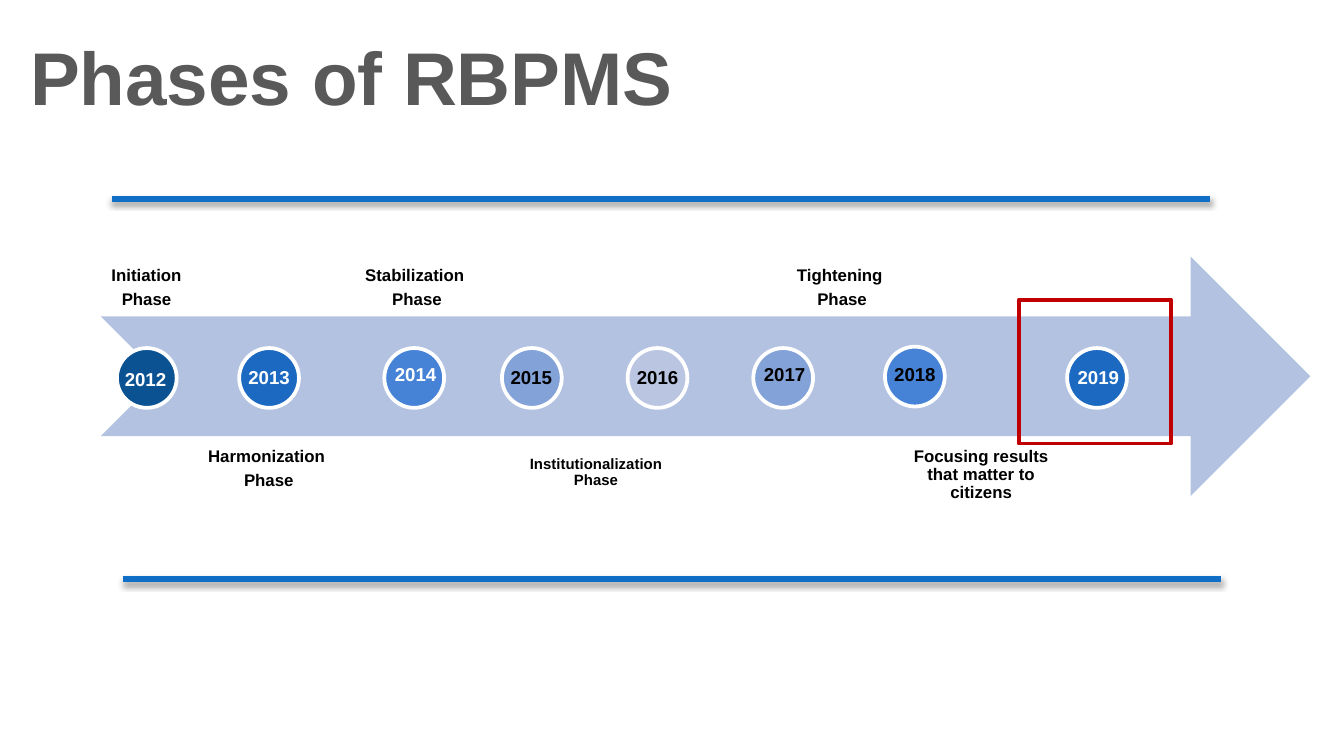
from lxml import etree
from pptx import Presentation
from pptx import util as u
from pptx.dml.color import RGBColor
from pptx.enum import shapes, text
from pptx.oxml import ns

PX = 4572
FONT = "Arial"
COLORS = {
    "title": "595959", "arrow": "B4C2E2", "rule": "0F6FC6", "focus": "C00000",
    "white": "FFFFFF", "black": "000000", "navy": "0B5292", "blue": "1C69C1",
    "mid": "4682D6", "soft": "83A2D8", "pale": "B9C5E1",
}
CIRCLE = 89
YEARS = [
    ("2012", 24, 136, "navy", "white", (16, 156, 110)),
    ("2013", 206, 136, "blue", "white", (200, 152, 132)),
    ("2014", 422, 136, "mid", "white", (418, 148, 134)),
    ("2015", 597, 136, "soft", "black", (590, 153, 116)),
    ("2016", 784, 136, "pale", "black", (778, 153, 150)),
    ("2017", 971, 136, "soft", "black", (967, 148, 116)),
    ("2018", 1167, 134, "mid", "black", (1161, 148, 134)),
    ("2019", 1438, 136, "blue", "white", (1434, 152, 120)),
]
TOP, BOTTOM = text.MSO_ANCHOR.TOP, text.MSO_ANCHOR.BOTTOM
PHASES = [
    (["Initiation ", "Phase"], 1, -264, 134, BOTTOM, 9),
    (["Harmonization ", "Phase"], 142, 270, 216, TOP, 9),
    (["Stabilization", " Phase"], 366, -264, 202, BOTTOM, 9),
    (["Institutionalization Phase"], 624, 2, 226, BOTTOM, 8),
    (["Tightening ", "Phase"], 978, -264, 250, BOTTOM, 9),
    (["Focusing results that matter to citizens"], 1173, 270, 274, TOP, 9),
]


def px(*lengths):
    """Turn px lengths into EMU."""
    return [u.Emu(length * PX) for length in lengths]


def color(name):
    """Look up a named colour."""
    return RGBColor.from_string(COLORS[name])


def add_text(slide, box, lines, size, fill="black", anchor=TOP, align=text.PP_ALIGN.LEFT,
             insets=(20, 10), spacing=None, after=None):
    """Add a bold text box with one paragraph per line."""
    frame = slide.shapes.add_textbox(*px(*box)).text_frame
    frame.word_wrap = True
    frame.vertical_anchor = anchor
    frame.margin_left = frame.margin_right = px(insets[0])[0]
    frame.margin_top = frame.margin_bottom = px(insets[1])[0]
    for index, line in enumerate(lines):
        paragraph = frame.paragraphs[0] if index == 0 else frame.add_paragraph()
        paragraph.alignment = align
        paragraph.line_spacing = spacing
        paragraph.space_after = after
        run = paragraph.add_run()
        run.text = line
        run.font.name, run.font.size, run.font.bold = FONT, u.Pt(size), True
        run.font.color.rgb = color(fill)


def add_shape(slide, kind, box, fill=None, line=None):
    """Add a flat preset shape with an optional fill and outline."""
    shape = slide.shapes.add_shape(kind, *px(*box))
    shape.shadow.inherit = False
    if fill:
        shape.fill.solid()
        shape.fill.fore_color.rgb = color(fill)
    else:
        shape.fill.background()
    if line:
        shape.line.color.rgb = color(line)
        shape.line.width = u.Pt(2)
    else:
        shape.line.fill.background()


def add_rule(slide, left, top, width):
    """Add a horizontal rule with a soft shadow below it."""
    rule = slide.shapes.add_connector(
        shapes.MSO_CONNECTOR.STRAIGHT, *px(left, top, left + width, top))
    rule.line.color.rgb = color("rule")
    rule.line.width = u.Pt(3)
    effects = etree.SubElement(rule._element.spPr, ns.qn("a:effectLst"))
    shadow = etree.SubElement(effects, ns.qn("a:outerShdw"), blurRad=str(u.Pt(3.1)),
                              dist=str(u.Pt(1.8)), dir="5400000", rotWithShape="0")
    tint = etree.SubElement(shadow, ns.qn("a:srgbClr"), val=COLORS["black"])
    etree.SubElement(tint, ns.qn("a:alpha"), val="35000")


def add_title(slide, box):
    """Add the slide heading."""
    add_text(slide, box, ["Phases of RBPMS"], 40, "title", text.MSO_ANCHOR.MIDDLE)


def add_timeline(slide, box):
    """Add the arrow with its phases, years and focus frame."""
    left, top, width, height = box
    add_shape(slide, shapes.MSO_SHAPE.NOTCHED_RIGHT_ARROW, box, "arrow")
    for lines, x, y, label_width, anchor, size in PHASES:
        inset = 2 * size - 4
        add_text(slide, (left + x, top + y, label_width, height), lines, size,
                 anchor=anchor, align=text.PP_ALIGN.CENTER, insets=(inset, inset),
                 spacing=0.9, after=u.Pt(size * 0.35))
    for year, x, y, fill, ink, (text_x, text_y, text_width) in YEARS:
        add_shape(slide, shapes.MSO_SHAPE.OVAL,
                  (left + x, top + y, CIRCLE, CIRCLE), fill, "white")
        add_text(slide, (left + text_x, top + text_y, text_width, 54), [year], 10, ink)
    add_shape(slide, shapes.MSO_SHAPE.RECTANGLE,
              (left + 1366, top + 64, 227, 214), line="focus")


def main():
    """Build and save the slide."""
    presentation = Presentation()
    presentation.slide_width, presentation.slide_height = px(2000, 1125)
    slide = presentation.slides.add_slide(presentation.slide_layouts[6])
    add_title(slide, (25, 19, 1984, 188))
    add_timeline(slide, (150, 382, 1800, 356))
    add_rule(slide, 183, 862, 1634)
    add_rule(slide, 166, 296, 1634)
    presentation.save("out.pptx")


if __name__ == "__main__":
    main()
